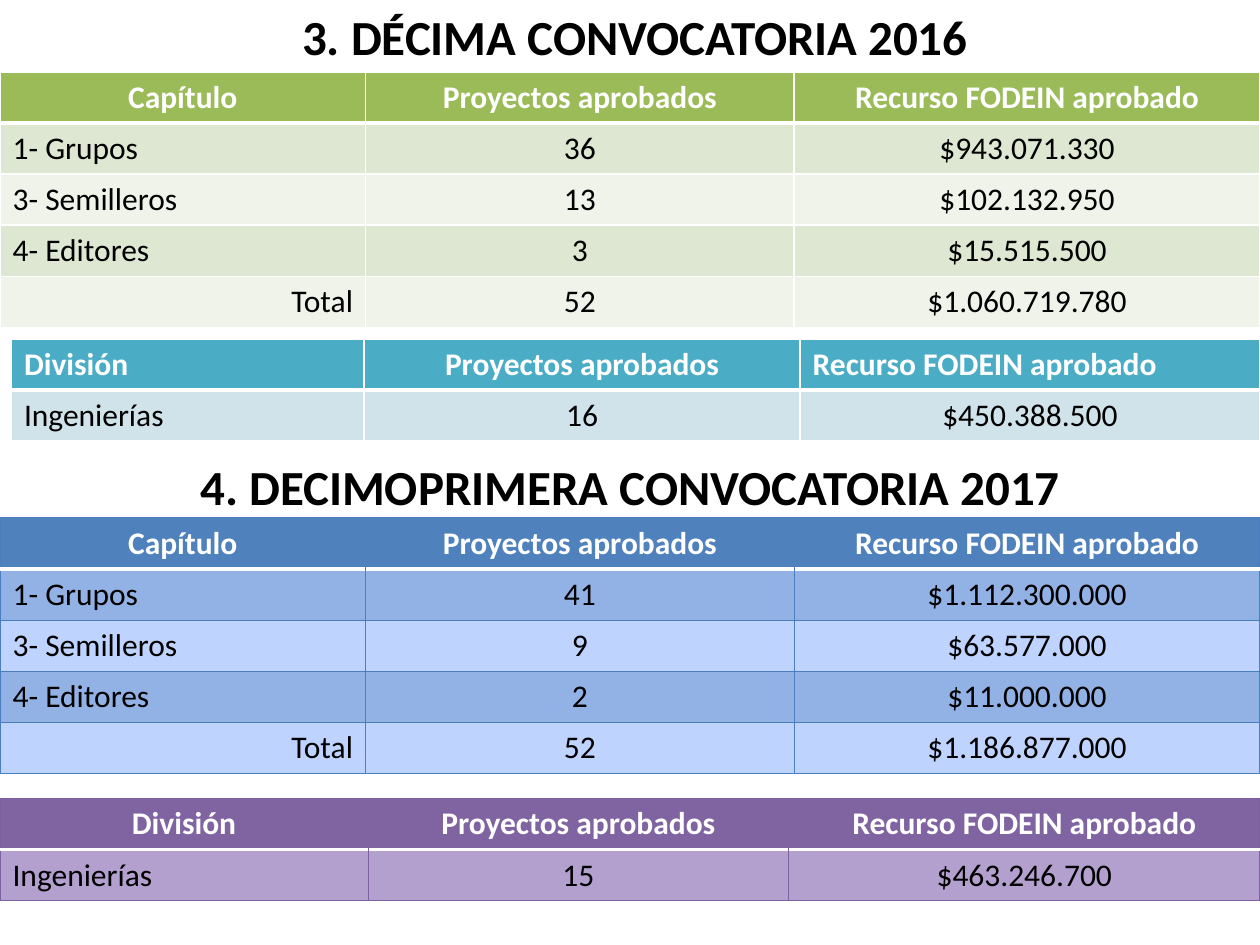
from lxml.etree import SubElement
from pptx import Presentation
from pptx.dml.color import RGBColor
from pptx.enum.text import MSO_ANCHOR, PP_ALIGN as Align
from pptx.oxml.ns import qn
from pptx.util import Cm, Pt

FONT = "Calibri"
ROW_H = 1.03
COLORS = {
    "black": "000000", "white": "FFFFFF",
    "green": "9BBB59", "green_band": "DEE7D1", "green_light": "EFF3EA",
    "teal": "4BACC6", "teal_band": "D0E3EA",
    "blue": "4F81BD", "blue_band": "92B2E5", "blue_light": "BFD3FF",
    "blue_line": "4B7EBC",
    "purple": "8064A2", "purple_band": "B3A0CF", "purple_line": "7D60A0",
}
HEADINGS = ["Proyectos aprobados", "Recurso FODEIN aprobado"]


def color(name):
    return RGBColor.from_string(COLORS[name])


def format_paragraph(p, size, name, bold, align):
    p.alignment = align
    for r in p.runs:
        r.font.name = FONT
        r.font.size = Pt(size)
        r.font.bold = bold
        r.font.color.rgb = color(name)


def add_title(s, text, left, top, width, height):
    sp = s.shapes.add_textbox(Cm(left), Cm(top), Cm(width), Cm(height))
    tf = sp.text_frame
    tf.word_wrap = True
    tf.vertical_anchor = MSO_ANCHOR.TOP
    tf.text = text
    format_paragraph(tf.paragraphs[0], 28, "black", True, Align.CENTER)


def set_border(cell, side, line):
    """Draw one cell edge; line is (colour, points) or None for no line."""
    tc_pr = cell._tc.get_or_add_tcPr()
    ln = SubElement(tc_pr, qn(f"a:ln{side}"))
    if line is None:
        SubElement(ln, qn("a:noFill"))
        return
    name, points = line
    ln.set("w", str(Pt(points)))
    fill = SubElement(ln, qn("a:solidFill"))
    SubElement(fill, qn("a:srgbClr")).set("val", COLORS[name])


def cell_align(i, j, text, head_aligns):
    if i == 0:
        return head_aligns[j]
    if j > 0:
        return Align.CENTER
    return Align.RIGHT if text == "Total" else Align.LEFT


def add_grid(s, left, top, widths, rows, hue, line, rule,
             head_lines=True, head_aligns=(Align.CENTER,) * 3):
    """Banded table: a header over a thick white rule, then body rows."""
    n_cols = len(widths)
    frame = s.shapes.add_table(len(rows), n_cols, Cm(left), Cm(top),
                               Cm(sum(widths)), Cm(ROW_H * len(rows)))
    table = frame.table
    for column, width in zip(table.columns, widths):
        column.width = Cm(width)
    for i, values in enumerate(rows):
        table.rows[i].height = Cm(ROW_H)
        head = i == 0
        fill = hue if head else f"{hue}_{'band' if i % 2 else 'light'}"
        for j, text in enumerate(values):
            cell = table.cell(i, j)
            inner = line if head_lines or not head else None
            set_border(cell, "L", line if j == 0 else inner)
            set_border(cell, "R", line if j == n_cols - 1 else inner)
            set_border(cell, "T", ("white", rule) if i == 1 else line)
            set_border(cell, "B", ("white", rule) if head else line)
            cell.fill.solid()
            cell.fill.fore_color.rgb = color(fill)
            cell.text_frame.text = text
            format_paragraph(cell.text_frame.paragraphs[0], 18,
                             "white" if head else "black", head,
                             cell_align(i, j, text, head_aligns))


def main():
    prs = Presentation()
    prs.slide_width, prs.slide_height = Cm(25.4), Cm(19.05)
    s = prs.slides.add_slide(prs.slide_layouts[6])
    chapter_widths = [7.37, 8.64, 9.39]

    # 2016 call
    add_title(s, "3. DÉCIMA CONVOCATORIA 2016", 2, 0, 21.6, 2.06)
    add_grid(s, 0, 1.45, chapter_widths, [
        ["Capítulo", *HEADINGS],
        ["1- Grupos", "36", "$943.071.330"],
        ["3- Semilleros", "13", "$102.132.950"],
        ["4- Editores", "3", "$15.515.500"],
        ["Total", "52", "$1.060.719.780"],
    ], "green", ("white", 1), 3)
    add_grid(s, 0.23, 6.83, [7.11, 8.79, 9.27], [
        ["División", *HEADINGS],
        ["Ingenierías", "16", "$450.388.500"],
    ], "teal", ("white", 1), 3,
        head_aligns=(Align.LEFT, Align.CENTER, Align.LEFT))

    # 2017 call
    add_title(s, "4. DECIMOPRIMERA CONVOCATORIA 2017", 0, 9.07, 25.4, 2.08)
    add_grid(s, 0, 10.44, chapter_widths, [
        ["Capítulo", *HEADINGS],
        ["1- Grupos", "41", "$1.112.300.000"],
        ["3- Semilleros", "9", "$63.577.000"],
        ["4- Editores", "2", "$11.000.000"],
        ["Total", "52", "$1.186.877.000"],
    ], "blue", ("blue_line", 0.75), 2, head_lines=False)
    add_grid(s, 0, 16.1, [7.42, 8.48, 9.5], [
        ["División", *HEADINGS],
        ["Ingenierías", "15", "$463.246.700"],
    ], "purple", ("purple_line", 0.75), 2, head_lines=False)

    prs.save("out.pptx")


if __name__ == "__main__":
    main()
